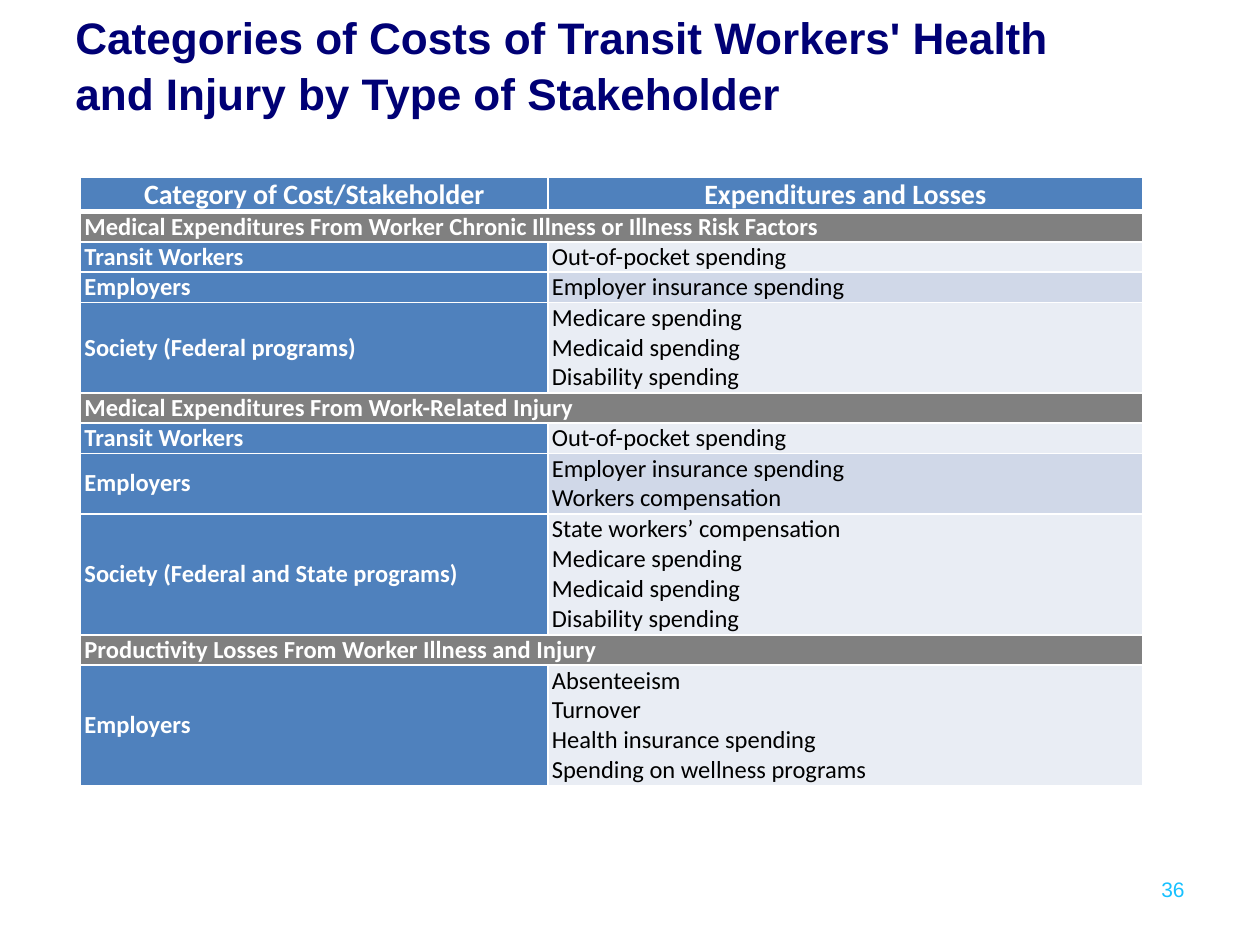
from typing import NamedTuple

from lxml import etree
from pptx import Presentation
from pptx.dml.color import RGBColor
from pptx.enum.text import MSO_ANCHOR, PP_ALIGN
from pptx.oxml.ns import qn
from pptx.util import Inches, Pt

MIDDLE = MSO_ANCHOR.MIDDLE
LEFT, CENTER, RIGHT = PP_ALIGN.LEFT, PP_ALIGN.CENTER, PP_ALIGN.RIGHT
COLORS = {
    "title": "000075", "number": "17C1FF", "white": "FFFFFF", "black": "000000",
    "blue": "4F81BD", "section": "808080", "light": "E9EDF4", "dark": "D0D8E8",
}
HEADER_HEIGHT, LINE_HEIGHT = 0.27, 0.24
COL_WIDTHS = (3.71, 4.72)


class Style(NamedTuple):
    size: float
    color: str
    bold: bool = False
    font: str = "Calibri"
    align: PP_ALIGN = LEFT


class CostRow(NamedTuple):
    """A stakeholder with its costs, or a section heading when it has none."""
    label: str
    costs: tuple[str, ...] = ()


TITLE = Style(25.2, "title", True, "Arial")
NUMBER = Style(12, "number", font="Arial", align=RIGHT)
HEADER = Style(16, "white", True, align=CENTER)
LABEL = Style(14, "white", True)
COST = Style(14, "black")

HEADINGS = ("Category of Cost/Stakeholder", "Expenditures and Losses")
FEDERAL = ("Medicare spending", "Medicaid spending", "Disability spending")
ROWS = [
    CostRow("Medical Expenditures From Worker Chronic Illness or Illness Risk Factors"),
    CostRow("Transit Workers", ("Out-of-pocket spending",)),
    CostRow("Employers", ("Employer insurance spending",)),
    CostRow("Society (Federal programs)", FEDERAL),
    CostRow("Medical Expenditures From Work-Related Injury"),
    CostRow("Transit Workers", ("Out-of-pocket spending",)),
    CostRow("Employers", ("Employer insurance spending", "Workers compensation")),
    CostRow("Society (Federal and State programs)",
            ("State workers’ compensation",) + FEDERAL),
    CostRow("Productivity Losses From Worker Illness and Injury"),
    CostRow("Employers", ("Absenteeism", "Turnover", "Health insurance spending",
                          "Spending on wellness programs")),
]


def write(tf, text: str, style: Style) -> None:
    tf.text = text
    for p in tf.paragraphs:
        p.alignment = style.align
        for r in p.runs:
            r.font.name = style.font
            r.font.size = Pt(style.size)
            r.font.bold = style.bold
            r.font.color.rgb = RGBColor.from_string(COLORS[style.color])


def add_text(s, box: tuple, text: str, style: Style):
    tf = s.shapes.add_textbox(*map(Inches, box)).text_frame
    tf.word_wrap = True
    tf.vertical_anchor = MIDDLE
    write(tf, text, style)
    return tf


def set_borders(cell, top: float = 1, bottom: float = 1) -> None:
    tc_pr = cell._tc.get_or_add_tcPr()
    widths = {"a:lnL": 1, "a:lnR": 1, "a:lnT": top, "a:lnB": bottom}
    for i, (tag, width) in enumerate(widths.items()):
        ln = etree.Element(qn(tag), w=str(Pt(width)))
        fill = etree.SubElement(ln, qn("a:solidFill"))
        etree.SubElement(fill, qn("a:srgbClr"), val=COLORS["white"])
        tc_pr.insert(i, ln)


def fill_cell(cell, text: str, style: Style, fill: str) -> None:
    cell.margin_left = cell.margin_right = Inches(0.03)
    cell.margin_top = cell.margin_bottom = 0
    cell.vertical_anchor = MIDDLE
    cell.fill.solid()
    cell.fill.fore_color.rgb = RGBColor.from_string(COLORS[fill])
    write(cell.text_frame, text, style)


def add_cost_table(s) -> None:
    heights = [HEADER_HEIGHT] + [LINE_HEIGHT * max(1, len(row.costs)) for row in ROWS]
    table = s.shapes.add_table(
        len(heights), len(COL_WIDTHS), Inches(0.64), Inches(1.41),
        Inches(sum(COL_WIDTHS)), Inches(sum(heights))).table
    for col, width in zip(table.columns, COL_WIDTHS):
        col.width = Inches(width)
    for table_row, height in zip(table.rows, heights):
        table_row.height = Inches(height)

    # Heading row
    for i, heading in enumerate(HEADINGS):
        fill_cell(table.cell(0, i), heading, HEADER, "blue")
        set_borders(table.cell(0, i), bottom=3)

    # Sections span both columns; cost cells alternate in shade
    for i, row in enumerate(ROWS, start=1):
        label, costs = table.cell(i, 0), table.cell(i, 1)
        if row.costs:
            fill_cell(label, row.label, LABEL, "blue")
            fill_cell(costs, "\n".join(row.costs), COST, "dark" if i % 2 else "light")
        else:
            label.merge(costs)
            fill_cell(label, row.label, LABEL, "section")
        for cell in (label, costs):
            set_borders(cell, top=3 if i == 1 else 1)


def main() -> None:
    prs = Presentation()
    prs.slide_width, prs.slide_height = Inches(10), Inches(7.5)
    s = prs.slides.add_slide(prs.slide_layouts[6])

    # Title
    tf = add_text(s, (0.5, 0, 8.56, 1.01),
                  "Categories of Costs of Transit Workers' Health "
                  "and Injury by Type of Stakeholder", TITLE)
    tf.paragraphs[0].line_spacing = 1.05

    add_cost_table(s)

    # Slide number
    add_text(s, (8.78, 6.92, 0.72, 0.27), "36", NUMBER)
    prs.save("out.pptx")


if __name__ == "__main__":
    main()
